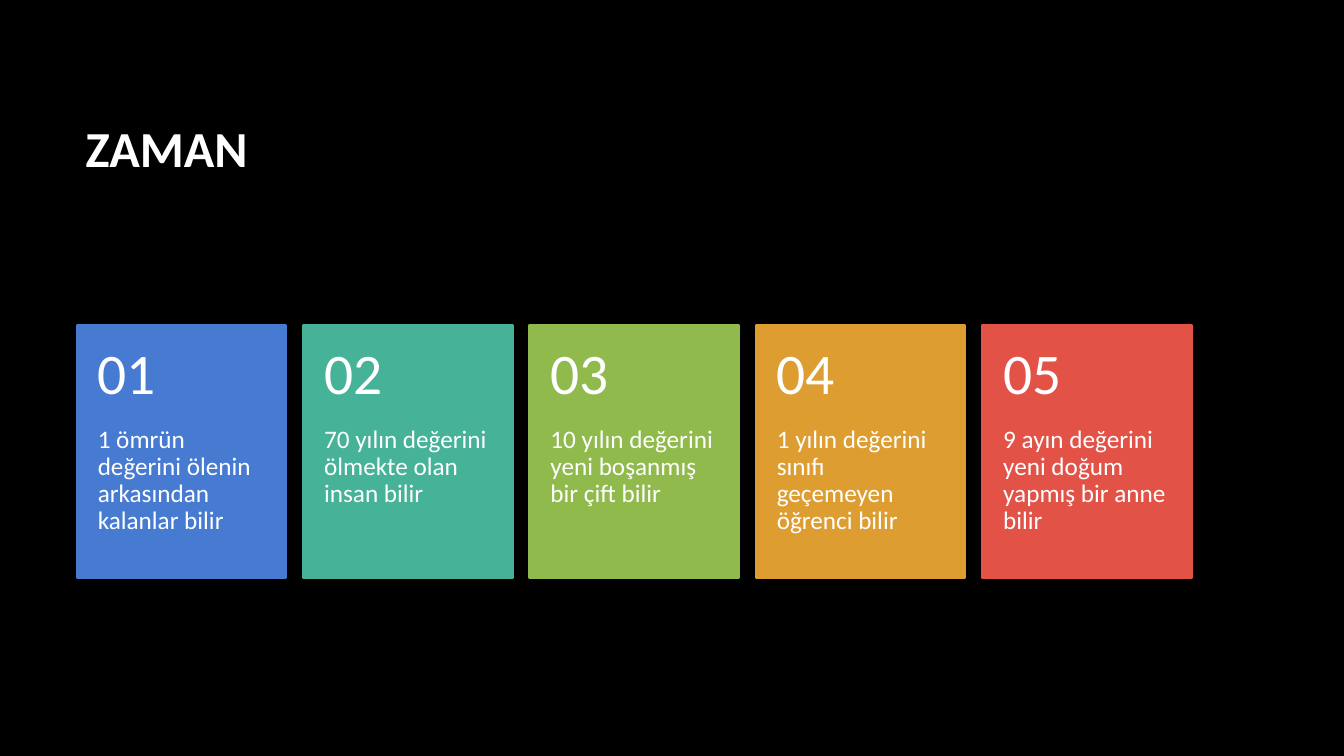
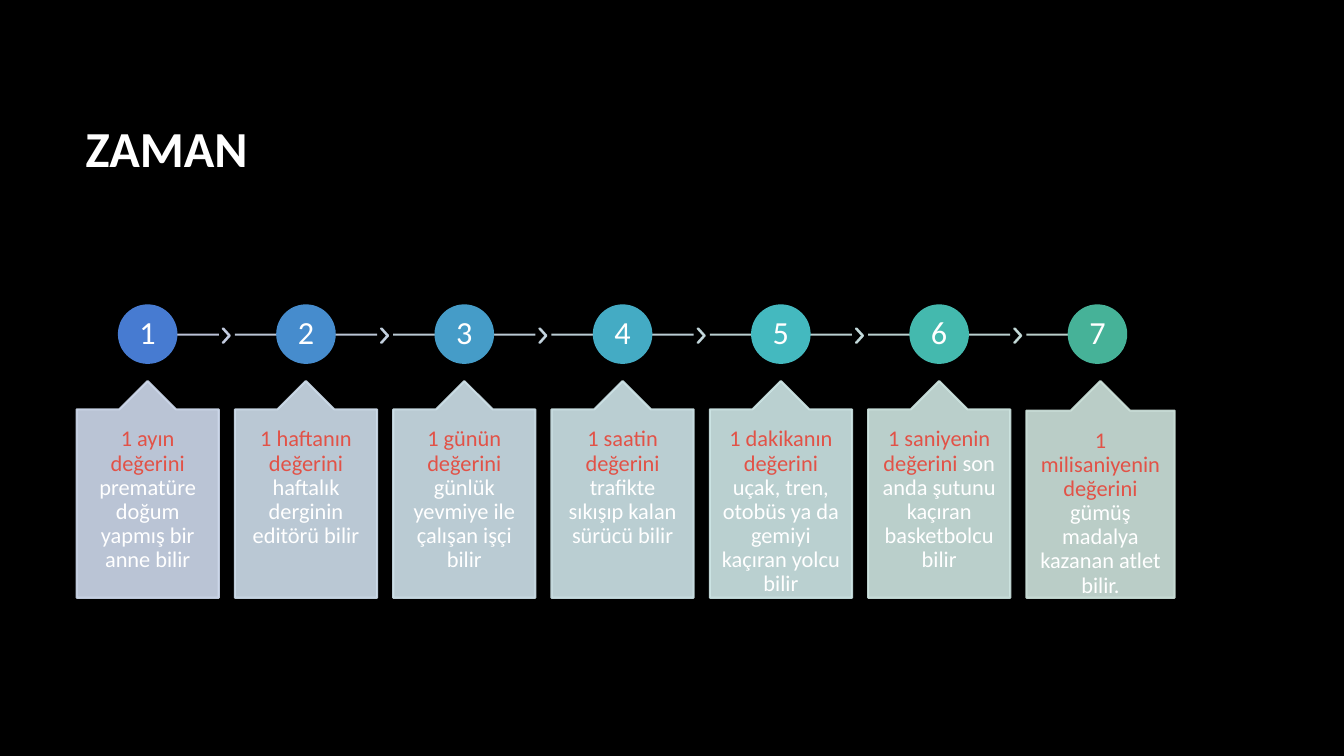
from lxml import etree
from pptx import Presentation
from pptx import util as u
from pptx.dml.color import RGBColor
from pptx.enum import shapes, text
from pptx.oxml import ns

FONT = "Calibri"
BLACK, WHITE, RED = "000000", "FFFFFF", "E25247"
SHAPE = shapes.MSO_SHAPE
TOP, MIDDLE = text.MSO_ANCHOR.TOP, text.MSO_ANCHOR.MIDDLE
LEFT, CENTER = text.PP_ALIGN.LEFT, text.PP_ALIGN.CENTER

LEFT_EDGE = 0.76
CARD_PITCH, CARD_TOP, CARD_WIDTH, CARD_HEIGHT = 2.245, 3.23, 2.08, 2.5
NUMBER_HEIGHT = 1
STEP_PITCH, STEP_WIDTH = 1.57, 1.41
CIRCLE_TOP, CIRCLE_SIZE = 3.03, 0.57
TRACK_Y = 3.32

CARDS = [
    ("477BD1", "1 ömrün değerini ölenin arkasından kalanlar bilir"),
    ("46B298", "70 yılın değerini ölmekte olan insan bilir"),
    ("90BA4C", "10 yılın değerini yeni boşanmış bir çift bilir"),
    ("DD9D31", "1 yılın değerini sınıfı geçemeyen öğrenci bilir"),
    (RED, "9 ayın değerini yeni doğum yapmış bir anne bilir"),
]

# circle, track, chevron, callout
STEP_COLORS = [
    ("477BD1", "CFD7EE", "CFD8EE", "CFDAED"),
    ("468CCD", "CFDBED", "CFDDEC", "CFDEEC"),
    ("459CC8", "CFDFEB", "CFE0EB", "CFE2EA"),
    ("44ABC4", "CFE3EA", "CFE4E9", "CFE5E9"),
    ("44B9BF", "CFE6E8", "CFE7E8", "CFE7E7"),
    ("44B9AE", "CFE7E6", "CFE6E4", "CFE6E2"),
    ("46B298", "CFE5E1", None, "CFE4DD"),
]
STEP_TEXTS = [
    ("1 ayın değerini ", "prematüre doğum yapmış bir anne bilir"),
    ("1 haftanın değerini ", "haftalık derginin editörü bilir"),
    ("1 günün değerini ", "günlük yevmiye ile çalışan işçi bilir"),
    ("1 saatin değerini ", "trafikte sıkışıp kalan sürücü bilir"),
    ("1 dakikanın değerini ", "uçak, tren, otobüs ya da gemiyi kaçıran yolcu bilir"),
    ("1 saniyenin değerini", " son anda şutunu kaçıran basketbolcu bilir"),
    ("1 milisaniyenin değerini ", "gümüş madalya kazanan atlet bilir."),
]


def color(value):
    return RGBColor.from_string(value)


def set_alpha(shape, percent):
    for element in shape._element.spPr.iter(ns.qn("a:srgbClr")):
        etree.SubElement(element, ns.qn("a:alpha"), val=str(percent * 1000))


def write(shape, runs, size, anchor, align, insets, bold=False, spacing=0.9):
    frame = shape.text_frame
    frame.word_wrap = True
    frame.vertical_anchor = anchor
    (frame.margin_left, frame.margin_top,
     frame.margin_right, frame.margin_bottom) = map(u.Inches, insets)
    paragraph = frame.paragraphs[0]
    paragraph.alignment = align
    paragraph.line_spacing = spacing
    for words, run_color in runs:
        run = paragraph.add_run()
        run.text = words
        run.font.name = FONT
        run.font.size = u.Pt(size)
        run.font.bold = bold
        run.font.color.rgb = color(run_color)


def add_box(slide, left, top, width, height):
    return slide.shapes.add_textbox(*map(u.Inches, (left, top, width, height)))


def add_filled(slide, kind, left, top, width, height, fill, adjustments=()):
    shape = slide.shapes.add_shape(kind, *map(u.Inches, (left, top, width, height)))
    shape.shadow.inherit = False
    for index, value in enumerate(adjustments):
        shape.adjustments[index] = value
    shape.fill.solid()
    shape.fill.fore_color.rgb = color(fill)
    shape.line.color.rgb = color(fill)
    shape.line.width = u.Pt(1.5)
    return shape


def add_track(slide, start, end, line_color):
    track = slide.shapes.add_connector(
        shapes.MSO_CONNECTOR.STRAIGHT,
        *map(u.Inches, (start, TRACK_Y, end, TRACK_Y)))
    track.line.color.rgb = color(line_color)
    track.line.width = u.Pt(1.5)
    etree.SubElement(track._element.spPr, ns.qn("a:effectLst"))
    set_alpha(track, 90)


def add_titled_slide(presentation, title):
    slide = presentation.slides.add_slide(presentation.slide_layouts[6])
    slide.background.fill.solid()
    slide.background.fill.fore_color.rgb = color(BLACK)
    write(add_box(slide, 0.75, 0.67, 11.08, 1.59), [(title, WHITE)], 36,
          MIDDLE, LEFT, (0.1, 0.05, 0.1, 0.05), bold=True, spacing=1.0)
    return slide


def add_card(slide, index, fill, words):
    left = LEFT_EDGE + index * CARD_PITCH
    card = add_filled(slide, SHAPE.RECTANGLE, left, CARD_TOP, CARD_WIDTH, CARD_HEIGHT, fill)
    write(card, [(words, WHITE)], 18, TOP, LEFT, (0.21, NUMBER_HEIGHT, 0.21, 0.36))
    number = add_box(slide, left, CARD_TOP, CARD_WIDTH, NUMBER_HEIGHT)
    write(number, [(f"{index + 1:02}", WHITE)], 41, MIDDLE, LEFT, (0.21, 0.18, 0.21, 0.18))


def add_step(slide, index, colors, words):
    circle_color, track_color, chevron_color, callout_color = colors
    is_first, is_last = index == 0, index == len(STEP_TEXTS) - 1
    left = LEFT_EDGE + index * STEP_PITCH
    middle = left + STEP_WIDTH / 2
    add_track(slide, middle if is_first else left,
              middle if is_last else left + STEP_WIDTH, track_color)
    if chevron_color:
        chevron = add_filled(slide, SHAPE.CHEVRON, left + 1.45, 3.26, 0.07, 0.14,
                             chevron_color, [0.9])
        set_alpha(chevron, 90)
    circle = add_filled(slide, SHAPE.OVAL, left + 0.42, CIRCLE_TOP,
                        CIRCLE_SIZE, CIRCLE_SIZE, circle_color)
    write(circle, [(str(index + 1), WHITE)], 23, MIDDLE, CENTER, [0.02] * 4)
    width, inset = (1.47, 0.12) if is_last else (STEP_WIDTH, 0.11)
    callout = add_filled(slide, SHAPE.UP_ARROW_CALLOUT, left, 3.78, width, 2.15,
                         callout_color, [0.5, 0.2, 0.2, 1])
    set_alpha(callout, 90)
    write(callout, zip(words, (RED, WHITE)), 16, TOP, CENTER, (inset, 0.18, inset, 0.18))


def main():
    presentation = Presentation()
    presentation.slide_width = u.Inches(13.33)
    presentation.slide_height = u.Inches(7.5)

    cards_slide = add_titled_slide(presentation, "ZAMAN")
    for index, (fill, words) in enumerate(CARDS):
        add_card(cards_slide, index, fill, words)

    steps_slide = add_titled_slide(presentation, "ZAMAN")
    for index, (colors, words) in enumerate(zip(STEP_COLORS, STEP_TEXTS)):
        add_step(steps_slide, index, colors, words)

    presentation.save("out.pptx")


if __name__ == "__main__":
    main()
